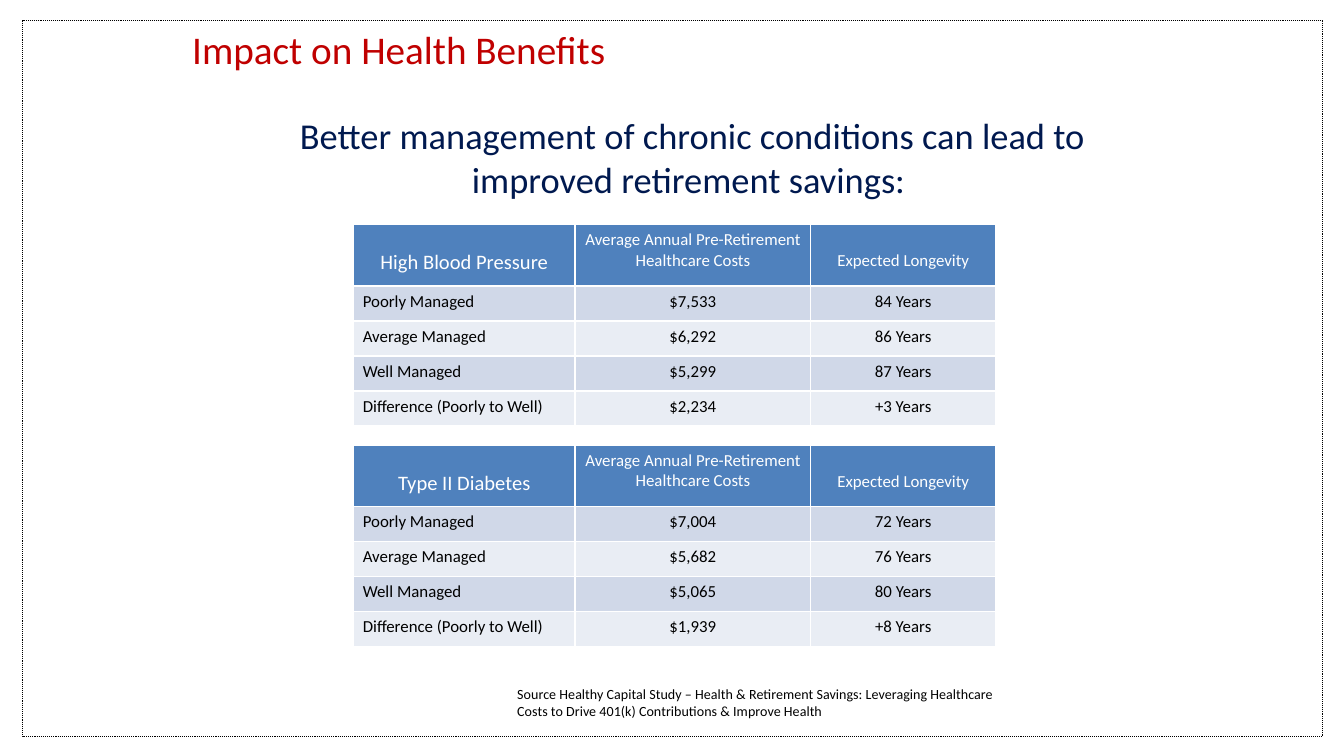
from pptx import Presentation
from pptx.dml.color import RGBColor
from pptx.enum.dml import MSO_LINE
from pptx.enum.shapes import MSO_SHAPE
from pptx.enum.text import MSO_ANCHOR as Anchor, MSO_AUTO_SIZE as AutoSize, PP_ALIGN as Align
from pptx.oxml import parse_xml
from pptx.oxml.ns import nsdecls
from pptx.util import Inches, Pt

FONT = "Calibri"
RED = RGBColor(0xC0, 0x00, 0x00)
NAVY = RGBColor(0x00, 0x19, 0x4F)
BLACK = RGBColor(0x00, 0x00, 0x00)
WHITE = RGBColor(0xFF, 0xFF, 0xFF)
HEADER_BLUE = RGBColor(0x4F, 0x81, 0xBD)
BANDS = (RGBColor(0xD0, 0xD8, 0xE8), RGBColor(0xE9, 0xED, 0xF4))

COLUMN_WIDTHS = (1.65, 1.75, 1.38)
HEADER_HEIGHT, ROW_HEIGHT = 0.46, 0.26
TABLE_LEFT = 2.63
LEVELS = ("Poorly Managed", "Average Managed", "Well Managed", "Difference (Poorly to Well)")

# Condition, top of its table, costs and longevity by level
CONDITIONS = (
    ("High Blood Pressure", 1.67,
     ("$7,533", "$6,292", "$5,299", "$2,234"),
     ("84 Years", "86 Years", "87 Years", "+3 Years")),
    ("Type II Diabetes", 3.31,
     ("$7,004", "$5,682", "$5,065", "$1,939"),
     ("72 Years", "76 Years", "80 Years", "+8 Years")),
)


def write(frame, text, size, color=BLACK, align=Align.LEFT):
    frame.word_wrap = True
    paragraph = frame.paragraphs[0]
    paragraph.alignment = align
    paragraph.space_before = Pt(0)
    run = paragraph.add_run()
    run.text = text
    run.font.name = FONT
    run.font.size = Pt(size)
    run.font.color.rgb = color


def place(shape, left, top, width, height):
    shape.left, shape.top = Inches(left), Inches(top)
    shape.width, shape.height = Inches(width), Inches(height)


def set_insets(box, bottom=0.04):
    box.margin_left = box.margin_right = Inches(0.07)
    box.margin_top, box.margin_bottom = Inches(0.04), Inches(bottom)


def add_frame(slide):
    frame = slide.shapes.add_shape(
        MSO_SHAPE.RECTANGLE, Inches(0.17), Inches(0.15), Inches(9.67), Inches(5.33))
    frame.shadow.inherit = False
    frame.fill.background()
    frame.line.color.rgb = BLACK
    frame.line.width = Pt(0.5)
    frame.line.dash_style = MSO_LINE.ROUND_DOT


def fill_title(title, text):
    place(title, 1.36, 0.17, 7.35, 0.39)
    frame = title.text_frame
    frame.auto_size = AutoSize.NONE
    frame.vertical_anchor = Anchor.MIDDLE
    set_insets(frame)
    write(frame, text, 21, RED)


def fill_message(body, text):
    place(body, 1.44, 0.79, 7.05, 1.21)
    frame = body.text_frame
    frame.auto_size = AutoSize.NONE
    properties = frame.paragraphs[0]._p.get_or_add_pPr()
    properties.set("marL", str(Inches(0.38)))
    properties.set("indent", "0")
    properties.append(parse_xml(f"<a:buNone {nsdecls('a')}/>"))
    write(frame, text, 19.5, NAVY, Align.CENTER)


def add_header_borders(cell):
    properties = cell._tc.get_or_add_tcPr()
    for side in "LRTB":
        properties.append(parse_xml(
            f'<a:ln{side} {nsdecls("a")} w="{Pt(1)}"><a:solidFill>'
            f'<a:srgbClr val="{WHITE}"/></a:solidFill></a:ln{side}>'))


def fill_cell(cell, text, fill, size=9, color=BLACK, align=Align.CENTER,
              anchor=Anchor.TOP, inset=0.04):
    cell.fill.solid()
    cell.fill.fore_color.rgb = fill
    cell.vertical_anchor = anchor
    set_insets(cell, inset)
    write(cell.text_frame, text, size, color, align)


def add_condition_table(slide, condition, top, costs, longevity):
    height = HEADER_HEIGHT + len(LEVELS) * ROW_HEIGHT
    table = slide.shapes.add_table(
        len(LEVELS) + 1, len(COLUMN_WIDTHS), Inches(TABLE_LEFT), Inches(top),
        Inches(sum(COLUMN_WIDTHS)), Inches(height)).table
    for column, width in zip(table.columns, COLUMN_WIDTHS):
        column.width = Inches(width)
    for index, row in enumerate(table.rows):
        row.height = Inches(ROW_HEIGHT if index else HEADER_HEIGHT)

    # Short header texts stand on the lower part of the row
    headers = ((condition, 11, Anchor.BOTTOM, 0.08),
               ("Average Annual Pre-Retirement Healthcare Costs", 9, Anchor.TOP, 0.04),
               ("Expected Longevity", 9, Anchor.BOTTOM, 0.11))
    for cell, (text, size, anchor, inset) in zip(table.rows[0].cells, headers):
        add_header_borders(cell)
        fill_cell(cell, text, HEADER_BLUE, size, WHITE, anchor=anchor, inset=inset)

    # One banded row for each level of management
    for index, values in enumerate(zip(LEVELS, costs, longevity)):
        for column, text in enumerate(values):
            fill_cell(table.cell(index + 1, column), text, BANDS[index % 2],
                      align=Align.CENTER if column else Align.LEFT)


def add_source(slide, text):
    source = slide.shapes.add_textbox(Inches(3.75), Inches(5.05), Inches(3.75), Inches(0.35))
    write(source.text_frame, text, 7.5)


def main():
    deck = Presentation()
    # Widescreen, 16 to 9
    deck.slide_width = Inches(10)
    deck.slide_height = deck.slide_width * 9 // 16
    slide = deck.slides.add_slide(deck.slide_layouts[1])

    add_frame(slide)
    fill_title(slide.shapes.title, "Impact on Health Benefits")
    fill_message(slide.placeholders[1],
                 "Better management of chronic conditions can lead to improved retirement savings: ")
    for condition in CONDITIONS:
        add_condition_table(slide, *condition)
    add_source(slide, "Source Healthy Capital Study – Health & Retirement Savings: Leveraging "
                      "Healthcare Costs to Drive 401(k) Contributions & Improve Health")
    deck.save("out.pptx")


if __name__ == "__main__":
    main()
